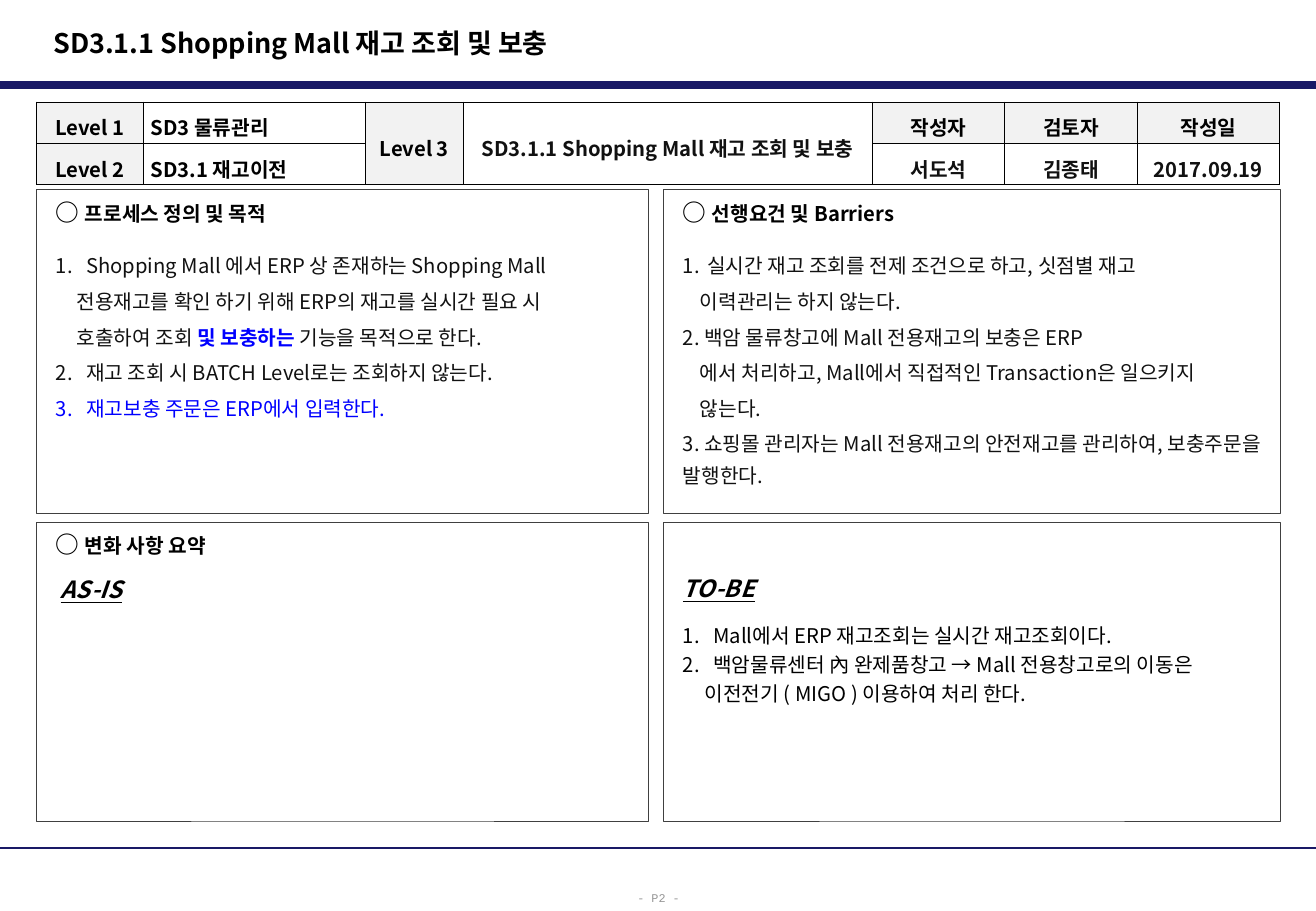
from dataclasses import dataclass

from lxml import etree
from pptx import Presentation
from pptx import util as u
from pptx.dml.color import RGBColor
from pptx.enum import shapes, text
from pptx.oxml.ns import qn


@dataclass(frozen=True)
class Theme:
    font: str = "Noto Sans CJK KR"
    mono: str = "Courier New"
    navy: str = "191966"
    edge: str = "404040"
    black: str = "000000"
    ink: str = "111111"
    blue: str = "0000FF"
    shade: str = "F2F2F2"
    gray: str = "969696"
    title: float = 16
    head: float = 14
    body: float = 12
    foot: float = 7


T = Theme()
WIDE, HIGH = 10.83, 7.5
COLS = ((0.3, 5.04), (5.46, 5.08))  # left and width of each panel column
ROWS = ((1.56, 2.67), (4.3, 2.46))  # top and height of each panel row
CENTER = text.PP_ALIGN.CENTER
MIDDLE = text.MSO_ANCHOR.MIDDLE

# Paragraph formats
HEAD = {"line_spacing": u.Pt(18)}
BODY = {"line_spacing": u.Pt(19), "space_before": u.Pt(2.1)}
FIRST = {**BODY, "space_before": u.Pt(12)}
LABEL = {**HEAD, "space_before": u.Pt(8.6)}
NOTE = {"line_spacing": u.Pt(17.2)}
NOTE1 = {**NOTE, "space_before": u.Pt(9.7)}
CELL = {"line_spacing": 1.3}

# Run formats: size, colour, font attributes
MARK = (T.head, T.black, {"bold": True})
BOLD = (T.body, T.black, {"bold": True})
DARK = (T.body, T.ink, {"bold": True})
TAG = (T.head, T.black, {"bold": True, "italic": True, "underline": True})
TEXT = (T.body, T.ink, {"bold": False})
PLAIN = (T.body, T.black, {"bold": False})
BLUE = (T.body, T.blue, {"bold": False})
STRONG = (T.body, T.blue, {"bold": True})


def assign(item, values):
    for name, value in values.items():
        setattr(item, name, value)


def box(*nums):
    return [u.Inches(n) for n in nums]


def add_run(para, words, style, face=T.font):
    size, color, look = style
    run = para.add_run()
    run.text = words
    assign(run.font, {"name": face, "size": u.Pt(size), **look})
    run.font.color.rgb = RGBColor.from_string(color)
    east = etree.SubElement(run.font._element, qn("a:ea"))
    east.set("typeface", face)


def indent(para, left, hang=0, start=None):
    props = para._p.get_or_add_pPr()
    props.set("marL", str(u.Inches(left)))
    props.set("indent", str(-u.Inches(hang)))
    if start:
        num = etree.SubElement(props, qn("a:buAutoNum"), type="arabicPeriod")
        if start > 1:
            num.set("startAt", str(start))


def fill_text(frame, paras):
    """Each entry is (format, (left, hang, start), runs)."""
    for i, (form, place, runs) in enumerate(paras):
        para = frame.paragraphs[0] if i == 0 else frame.add_paragraph()
        indent(para, *place)
        assign(para, {"alignment": text.PP_ALIGN.LEFT, **form})
        for words, style in runs:
            add_run(para, words, style)


def heading(words):
    return HEAD, (0,), [("○ ", MARK), (words, BOLD)]


def panel(slide, col, row, paras, top=0.05):
    (x, w), (y, h) = COLS[col], ROWS[row]
    rect = slide.shapes.add_shape(shapes.MSO_SHAPE.RECTANGLE, *box(x, y, w, h))
    rect.shadow.inherit = False
    rect.fill.background()
    rect.line.color.rgb = RGBColor.from_string(T.edge)
    rect.line.width = u.Pt(0.5)
    left, upper, right, lower = box(0.16, top, 0.1, 0.05)
    assign(rect.text_frame, {
        "margin_left": left, "margin_top": upper, "margin_right": right,
        "margin_bottom": lower, "word_wrap": True,
        "vertical_anchor": text.MSO_ANCHOR.TOP})
    fill_text(rect.text_frame, paras)


def rule(slide, y, width):
    line = slide.shapes.add_connector(
        shapes.MSO_CONNECTOR.STRAIGHT, *box(0, y, WIDE, y))
    line.line.color.rgb = RGBColor.from_string(T.navy)
    line.line.width = u.Pt(width)
    etree.SubElement(line._element.spPr, qn("a:effectLst"))


def label(slide, place, words, style, face=T.font, wrap=True, **form):
    frame = slide.shapes.add_textbox(*box(*place)).text_frame
    assign(frame, {"word_wrap": wrap, "vertical_anchor": MIDDLE})
    assign(frame.paragraphs[0], form)
    add_run(frame.paragraphs[0], words, style, face)


def border(cell):
    props = cell._tc.get_or_add_tcPr()
    for i, side in enumerate(("lnL", "lnR", "lnT", "lnB")):
        line = etree.Element(qn(f"a:{side}"), w=str(u.Pt(0.5)))
        paint = etree.SubElement(line, qn("a:solidFill"))
        etree.SubElement(paint, qn("a:srgbClr"), val=T.black)
        props.insert(i, line)


def info_table(slide):
    name = "SD3.1.1 Shopping Mall 재고 조회 및 보충"
    rows = (("Level 1", "SD3 물류관리", "Level 3", name, "작성자", "검토자", "작성일"),
            ("Level 2", "SD3.1 재고이전", "", "", "서도석", "김종태", "2017.09.19"))
    widths = (0.88, 1.83, 0.8, 3.37, 1.09, 1.09, 1.17)
    shaded = {(0, 0), (0, 2), (0, 4), (0, 5), (0, 6), (1, 0)}
    dark = {(0, 3), (1, 4), (1, 5), (1, 6)}
    grid = slide.shapes.add_table(2, 7, *box(0.3, 0.84, 10.24, 0.68)).table
    assign(grid, {"first_row": False, "horz_banding": False})
    for col, width in zip(grid.columns, widths):
        col.width = u.Inches(width)
    for col in (2, 3):
        grid.cell(0, col).merge(grid.cell(1, col))
    side, edge = box(0.06, 0.01)
    for r, row in enumerate(rows):
        grid.rows[r].height = u.Inches(0.34)
        for c, words in enumerate(row):
            cell = grid.cell(r, c)
            assign(cell, {"margin_left": side, "margin_right": side,
                          "margin_top": edge, "margin_bottom": edge,
                          "vertical_anchor": MIDDLE})
            if (r, c) in shaded:
                cell.fill.solid()
                cell.fill.fore_color.rgb = RGBColor.from_string(T.shade)
            else:
                cell.fill.background()
            border(cell)
            if words:
                form = CELL if c == 1 else {**CELL, "alignment": CENTER}
                style = DARK if (r, c) in dark else BOLD
                fill_text(cell.text_frame, [(form, (0,), [(words, style)])])


def main():
    deck = Presentation()
    deck.slide_width, deck.slide_height = box(WIDE, HIGH)
    slide = deck.slides.add_slide(deck.slide_layouts[6])

    # Frame of the page
    rule(slide, 0.7, 4.5)
    rule(slide, 6.98, 1.5)
    label(slide, (5.14, 7.25, 0.56, 0.25), "- P2 -", (T.foot, T.gray, {}),
          T.mono, wrap=False, line_spacing=1.3, alignment=CENTER)
    label(slide, (0.34, 0.16, 7.11, 0.38), "SD3.1.1 Shopping Mall 재고 조회 및 보충",
          (T.title, T.black, {"bold": True}))
    info_table(slide)

    # Definition and purpose
    panel(slide, 0, 0, [
        heading("프로세스 정의 및 목적"),
        (FIRST, (0.25, 0.25, 1), [("Shopping Mall 에서 ERP 상 존재하는 Shopping Mall", TEXT)]),
        (BODY, (0.17,), [("전용재고를 확인 하기 위해 ERP의 재고를 실시간 필요 시", TEXT)]),
        (BODY, (0.17,), [("호출하여 조회 ", TEXT), ("및 보충하는", STRONG),
                         (" 기능을 목적으로 한다.", TEXT)]),
        (BODY, (0.25, 0.25, 2), [("재고 조회 시 BATCH Level로는 조회하지 않는다.", TEXT)]),
        (BODY, (0.25, 0.25, 2), [("재고보충 주문은 ERP에서 입력한다.", BLUE)])])

    # Prerequisites and barriers
    panel(slide, 1, 0, [
        heading("선행요건 및 Barriers"),
        (FIRST, (0.2, 0.2, 1), [("실시간 재고 조회를 전제 조건으로 하고, 싯점별 재고", TEXT)]),
        (BODY, (0.14,), [("이력관리는 하지 않는다.", TEXT)]),
        (BODY, (0,), [("2. 백암 물류창고에 Mall 전용재고의 보충은 ERP", TEXT)]),
        (BODY, (0.14,), [("에서 처리하고, Mall에서 직접적인 Transaction은 일으키지", TEXT)]),
        (BODY, (0.14,), [("않는다.", TEXT)]),
        (BODY, (0,), [("3. 쇼핑몰 관리자는 Mall 전용재고의 안전재고를 관리하여, "
                       "보충주문을 발행한다.", TEXT)])])

    # Summary of changes
    panel(slide, 0, 1, [heading("변화 사항 요약"),
                        (LABEL, (0.04,), [("AS-IS", TAG)])])
    panel(slide, 1, 1, [
        (HEAD, (0,), [("TO-BE", TAG)]),
        (NOTE1, (0.25, 0.25, 1), [("Mall에서 ERP 재고조회는 실시간 재고조회이다.", PLAIN)]),
        (NOTE, (0.25, 0.25, 1), [("백암물류센터 內 완제품창고 → Mall 전용창고로의 이동은", PLAIN)]),
        (NOTE, (0.18,), [("이전전기 ( MIGO ) 이용하여 처리 한다.", PLAIN)])], top=0.41)
    deck.save("out.pptx")


if __name__ == "__main__":
    main()
